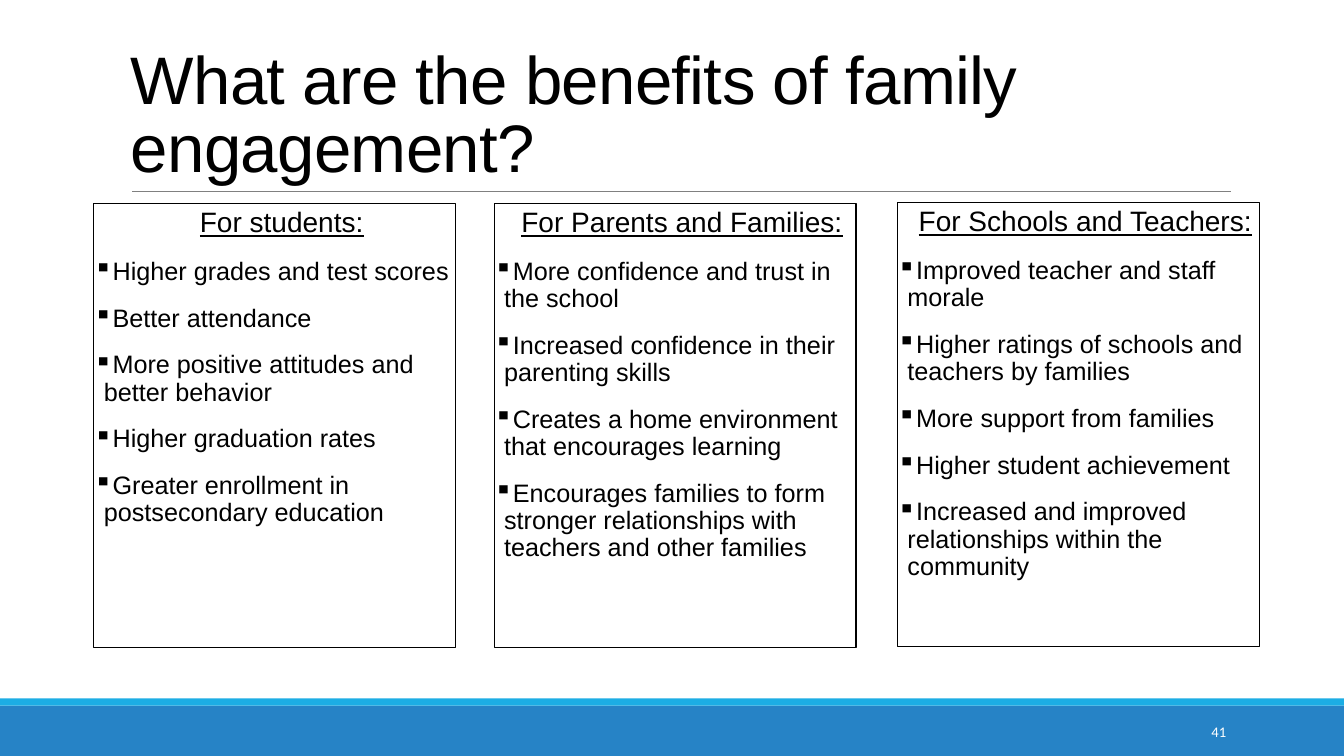
from lxml import etree
from pptx import Presentation
from pptx.dml.color import RGBColor
from pptx.enum import shapes, text
from pptx.oxml import ns
from pptx.util import Inches, Pt

BLACK = RGBColor(0x00, 0x00, 0x00)
WHITE = RGBColor(0xFF, 0xFF, 0xFF)
GRAY = RGBColor(0x80, 0x80, 0x80)
BLUE = RGBColor(0x26, 0x83, 0xC6)
CYAN = RGBColor(0x1C, 0xAD, 0xE4)


def add_rect(left, top, width, height):
    rect = slide.shapes.add_shape(
        shapes.MSO_SHAPE.RECTANGLE,
        Inches(left), Inches(top), Inches(width), Inches(height))
    rect.shadow.inherit = False
    return rect


def write(paragraph, words, size, color, font="Arial", underline=False):
    run = paragraph.add_run()
    run.text = words
    formats = {"size": Pt(size), "name": font, "underline": underline}
    for key, value in formats.items():
        setattr(run.font, key, value)
    run.font.color.rgb = color
    return run


prs = Presentation()
prs.slide_width, prs.slide_height = Inches(13.33), Inches(7.5)
slide = prs.slides.add_slide(prs.slide_layouts[6])

# Footer bands
for top, height, color in [(7, 0.5, BLUE), (6.93, 0.07, CYAN)]:
    band = add_rect(0, top, 13.33, height)
    band.fill.solid()
    band.fill.fore_color.rgb = color
    band.line.fill.background()

# Rule under the title
rule = slide.shapes.add_connector(
    shapes.MSO_CONNECTOR.STRAIGHT,
    Inches(1.31), Inches(1.9), Inches(12.21), Inches(1.9))
rule.line.color.rgb = GRAY
rule.line.width = Pt(0.5)
etree.SubElement(rule._element.spPr, ns.qn("a:effectLst"))

# Title
title = slide.shapes.add_textbox(
    Inches(1.2), Inches(0.31), Inches(11), Inches(1.59)).text_frame
title.word_wrap = True
title.vertical_anchor = text.MSO_ANCHOR.BOTTOM
title.paragraphs[0].line_spacing = 0.85
question = write(title.paragraphs[0],
                 "What are the benefits of family engagement?", 48, BLACK)
question._r.get_or_add_rPr().set("spc", "-50")

# Benefit columns
columns = [
    (0.93, 2.02, "For students:", [
        "Higher grades and test scores",
        "Better attendance",
        "More positive attitudes and better behavior",
        "Higher graduation rates",
        "Greater enrollment in postsecondary education"]),
    (4.9, 2.02, "For Parents and Families:", [
        "More confidence and trust in the school",
        "Increased confidence in their parenting skills",
        "Creates a home environment that encourages learning",
        "Encourages families to form stronger relationships with "
        "teachers and other families"]),
    (8.9, 2.01, "For Schools and Teachers:", [
        "Improved teacher and staff morale",
        "Higher ratings of schools and teachers by families",
        "More support from families",
        "Higher student achievement",
        "Increased and improved relationships within the community"]),
]
for left, top, heading, benefits in columns:
    column = add_rect(left, top, 3.59, 4.4)
    column.fill.background()
    column.line.color.rgb = BLACK
    column.line.width = Pt(0.75)
    frame = column.text_frame
    frame_formats = {
        "word_wrap": True, "vertical_anchor": text.MSO_ANCHOR.TOP,
        "margin_left": 0, "margin_right": 0,
        "margin_top": Inches(0.05), "margin_bottom": Inches(0.05)}
    for key, value in frame_formats.items():
        setattr(frame, key, value)

    for index, words in enumerate([heading, *benefits]):
        is_heading = index == 0
        paragraph = frame.paragraphs[0] if is_heading else frame.add_paragraph()
        paragraph_formats = {
            "alignment": text.PP_ALIGN.CENTER if is_heading else text.PP_ALIGN.LEFT,
            "line_spacing": 0.9, "space_before": Pt(12), "space_after": Pt(2)}
        for key, value in paragraph_formats.items():
            setattr(paragraph, key, value)
        # Hanging bullet; the heading has a blank one
        properties = paragraph._p.get_or_add_pPr()
        properties.set("marL", str(Inches(0.1)))
        properties.set("indent", str(-Inches(0.1)))
        bullet = etree.SubElement(properties, ns.qn("a:buChar"))
        bullet.set("char", " " if is_heading else "▪")
        write(paragraph, words, 20 if is_heading else 18, BLACK,
              underline=is_heading)

# Slide number
number = slide.shapes.add_textbox(
    Inches(10.83), Inches(7.06), Inches(1.43), Inches(0.4)).text_frame
number.word_wrap = True
number.vertical_anchor = text.MSO_ANCHOR.MIDDLE
number.paragraphs[0].alignment = text.PP_ALIGN.RIGHT
write(number.paragraphs[0], "41", 10.5, WHITE, font="Calibri")

prs.save("out.pptx")
